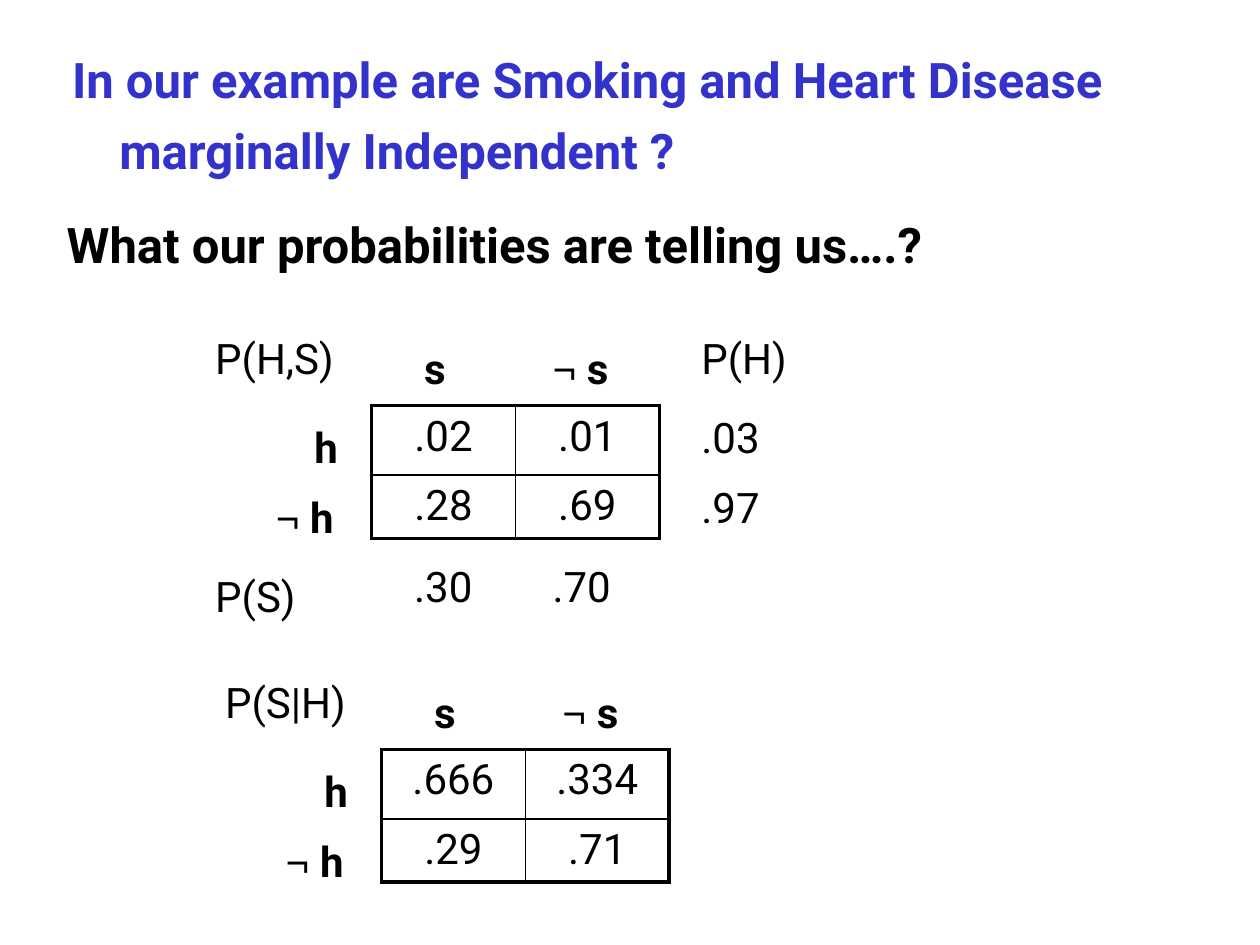
from lxml.etree import SubElement
from pptx import Presentation
from pptx.dml.color import RGBColor
from pptx.enum.text import MSO_ANCHOR, MSO_AUTO_SIZE as AutoSize, PP_ALIGN
from pptx.oxml.ns import qn
from pptx.util import Cm, Pt

BLUE = RGBColor(0x33, 0x33, 0xCC)
BLACK = RGBColor(0, 0, 0)
TEXT_FONT, SYMBOL_FONT = "Roboto", "Times New Roman"

# Content: positions in cm, those of a grid's labels relative to its corner
QUESTION = "In our example are Smoking and Heart Disease marginally Independent ?"
PROMPT = "What our probabilities are telling us….?"
GRIDS = [
    {"name": "P(H,S)", "corner": (7.49, 8.18),
     "values": [[".02", ".01"], [".28", ".69"]]},
    {"name": "P(S|H)", "corner": (7.69, 15.11),
     "values": [[".666", ".334"], [".29", ".71"]]},
]
AXIS_LABELS = [  # text, x, y, width
    ("s", 0.81, -1.4, 1.0), ("¬ s", 3.4, -1.4, 1.8),
    ("h", -1.4, 0.2, 1.02), ("¬ h", -2.18, 1.6, 1.85),
]
MARGINALS = [  # text, x, y, width
    ("P(H)", 6.4, -1.6, 2.8), (".03", 6.4, 0, 2.4), (".97", 6.4, 1.4, 2.4),
    ("P(S)", -3.4, 3.2, 2.8), (".30", 0.61, 3.0, 2.4), (".70", 3.4, 3.0, 2.4),
]
COLUMN_WIDTH, ROW_HEIGHTS = 2.9, (1.4, 1.27)
LABEL_HEIGHT = 1.27
OUTER, INNER = Pt(2.25), Pt(1)


def style_run(run, size, color=BLACK, bold=False, font=TEXT_FONT):
    run.font.name, run.font.size, run.font.bold = font, Pt(size), bold
    run.font.color.rgb = color


def space_before(paragraph):
    """Space before a paragraph as a fifth of the line."""
    paragraph.space_before = Pt(1)
    spacing = paragraph._p.pPr.find(qn("a:spcBef"))
    spacing.remove(spacing[0])
    SubElement(spacing, qn("a:spcPct"), val="20000")


def fill_heading(holder, text, box, color, anchor):
    holder.left, holder.top, holder.width, holder.height = map(Cm, box)
    frame = holder.text_frame
    frame.text = text
    frame.auto_size, frame.vertical_anchor = AutoSize.NONE, anchor
    paragraph = frame.paragraphs[0]
    paragraph.alignment, paragraph.line_spacing = PP_ALIGN.LEFT, 1.2
    space_before(paragraph)
    properties = paragraph._p.pPr
    properties.set("marL", str(Cm(0.95)))
    properties.set("indent", str(-Cm(0.95)))
    SubElement(properties, qn("a:buNone"))
    style_run(paragraph.runs[0], 28, color, bold=True)


def add_label(corner, text, x, y, width, axis=False):
    label = slide.shapes.add_textbox(Cm(corner[0] + x), Cm(corner[1] + y),
                                     Cm(width), Cm(LABEL_HEIGHT))
    frame = label.text_frame
    frame.word_wrap, frame.auto_size = not axis, AutoSize.SHAPE_TO_FIT_TEXT
    paragraph = frame.paragraphs[0]
    negation, letters = text[:-1] if axis else "", text[-1] if axis else text
    for part, font in ((negation, SYMBOL_FONT), (letters, TEXT_FONT)):
        if part:
            run = paragraph.add_run()
            run.text = part
            style_run(run, 24, bold=axis, font=font)


def set_borders(cell, widths):
    properties = cell._tc.get_or_add_tcPr()
    for position, (side, width) in enumerate(widths.items()):
        line = properties.makeelement(qn(f"a:ln{side}"), {"w": str(width)})
        fill = SubElement(line, qn("a:solidFill"))
        SubElement(fill, qn("a:srgbClr"), val=str(BLACK))
        properties.insert(position, line)


def add_grid(corner, values):
    rows, columns = len(values), len(values[0])
    table = slide.shapes.add_table(
        rows, columns, Cm(corner[0]), Cm(corner[1]),
        Cm(COLUMN_WIDTH * columns), Cm(sum(ROW_HEIGHTS))).table
    table.first_row = table.horz_banding = False
    for column in table.columns:
        column.width = Cm(COLUMN_WIDTH)
    for r, row_values in enumerate(values):
        table.rows[r].height = Cm(ROW_HEIGHTS[r])
        for c, value in enumerate(row_values):
            cell = table.cell(r, c)
            cell.text = value
            cell.fill.background()
            paragraph = cell.text_frame.paragraphs[0]
            paragraph.alignment = PP_ALIGN.CENTER
            space_before(paragraph)
            style_run(paragraph.runs[0], 24)
            set_borders(cell, {
                "L": OUTER if c == 0 else INNER,
                "R": OUTER if c == columns - 1 else INNER,
                "T": OUTER if r == 0 else INNER,
                "B": OUTER if r == rows - 1 else INNER,
            })


# Slide
deck = Presentation()
deck.slide_width, deck.slide_height = Cm(25.4), Cm(19.05)
slide = deck.slides.add_slide(deck.slide_layouts[1])

# Headings
title, body = slide.placeholders
fill_heading(title, QUESTION, (1.2, 0.8, 23.3, 2.77), BLUE, MSO_ANCHOR.MIDDLE)
fill_heading(body, PROMPT, (1.09, 3.96, 24.3, 1.98), BLACK, MSO_ANCHOR.TOP)

# Probability grids with their row and column labels
for grid in GRIDS:
    add_label(grid["corner"], grid["name"], -3.4, -1.6, 3.2)
    add_grid(grid["corner"], grid["values"])
    for axis_label in AXIS_LABELS:
        add_label(grid["corner"], *axis_label, axis=True)

# Marginals around the joint distribution
for marginal in MARGINALS:
    add_label(GRIDS[0]["corner"], *marginal)

deck.save("out.pptx")
